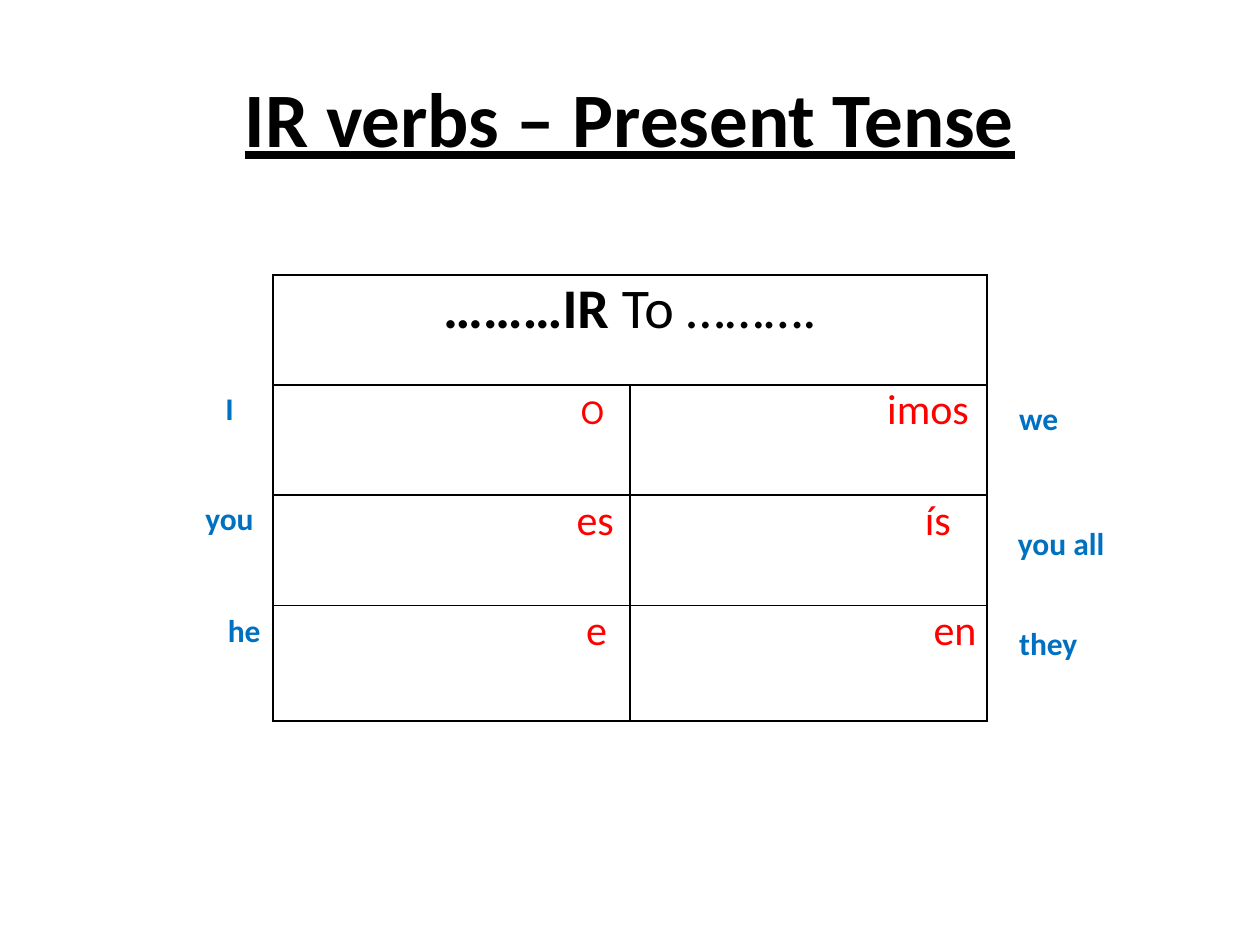
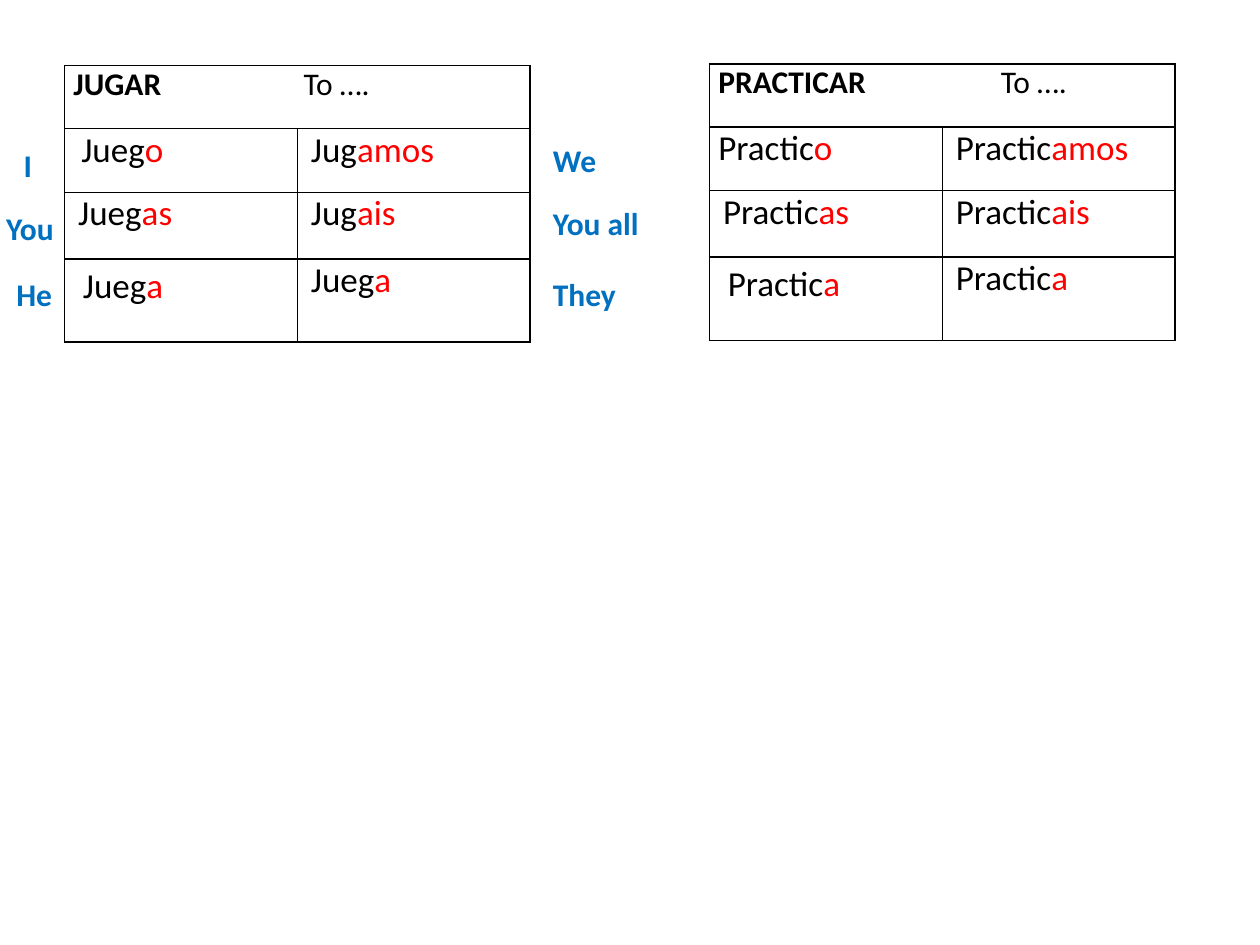
"""Build two slides of Spanish present tense verb tables."""
import pptx
import pptx.util
import pptx.dml.color
import pptx.enum.text
import pptx.oxml
import pptx.oxml.ns

Pt = pptx.util.Pt
RGBColor = pptx.dml.color.RGBColor
ALIGN = pptx.enum.text.PP_ALIGN

BLACK = RGBColor(0x00, 0x00, 0x00)
RED = RGBColor(0xFF, 0x00, 0x00)
BLUE = RGBColor(0x00, 0x70, 0xC0)
FONT = "Calibri"
INSET = 5

TITLE = "IR verbs – Present Tense"

# Cells: (stem, ending, left inset, top inset, size)
ENDINGS = {
    "at": (156, 157), "col": 204, "rows": (63, 63, 63, 66),
    "header": ("………IR", " To ………."), "header_size": 32, "tab": None,
    "cells": [
        [("", "O", 176, 3.5, 20), ("", "imos", 147, 0, 24)],
        [("", "es", 173.5, 0, 24), ("", "ís", 168.5, 0, 24)],
        [("", "e", 179, 0, 24), ("", "en", 173.5, 0, 24)],
    ],
}


def verb_table(at, infinitive, tab, stems, first_inset):
    """Describe the table of one -ar verb."""
    stem, plural_stem = stems
    return {
        "at": at, "col": 133, "rows": (36, 36.5, 38, 47.5),
        "header": (infinitive, "\tTo …."), "header_size": 18, "tab": tab,
        "cells": [
            [(stem, "o", first_inset, 0, 20), (plural_stem, "amos", 7.7, 0, 20)],
            [(stem, "as", 7.7, 0, 20), (plural_stem, "ais", 7.7, 0, 20)],
            [(stem, "a", 10.4, 3.5, 20), (stem, "a", 7.7, 0, 20)],
        ],
    }


VERBS = [
    verb_table((37, 37.5), "JUGAR", 131.5, ("Jueg", "Jug"), 9.5),
    verb_table((405.5, 36.5), "PRACTICAR", 161.5, ("Practic", "Practic"), INSET),
]

# Pronouns: (text, left, top, width)
ENDING_PRONOUNS = [
    ("I", 121.7, 218.9, 19.4), ("you", 110.2, 281.5, 42.5), ("he", 123.1, 345.6, 33.1),
    ("we", 575.3, 224.6, 36.7), ("you all", 574.6, 295.9, 64.1), ("they", 575.3, 352.8, 48.2),
]
VERB_PRONOUNS = [
    ("I", 6.5, 79.9, 19.4), ("You", -3.6, 115.9, 43), ("He", 2.2, 153.4, 35.3),
    ("We", 308.9, 77, 39.6), ("You all", 308.9, 113, 64.1), ("They", 308.9, 153.4, 50.4),
]


def add_run(p, text, size, color=BLACK, bold=False):
    """Append a formatted run to a paragraph."""
    r = p.add_run()
    r.text = text
    r.font.name, r.font.size, r.font.bold = FONT, Pt(size), bold
    r.font.color.rgb = color
    return r


def add_borders(cell):
    """Draw a one point black line on each side of a cell."""
    tcPr = cell._tc.get_or_add_tcPr()
    for i, side in enumerate("LRTB"):
        tcPr.insert(i, pptx.oxml.parse_xml(
            f'<a:ln{side} {pptx.oxml.ns.nsdecls("a")} w="12700"><a:solidFill>'
            f'<a:srgbClr val="{BLACK}"/></a:solidFill></a:ln{side}>'))


def add_tab(p, position):
    """Set one left tab stop on a paragraph."""
    p._p.get_or_add_pPr().append(pptx.oxml.parse_xml(
        f'<a:tabLst {pptx.oxml.ns.nsdecls("a")}>'
        f'<a:tab pos="{int(Pt(position))}" algn="l"/></a:tabLst>'))


def add_verb_table(s, spec_):
    """Add a verb table with a merged header row."""
    rows, col = spec_["rows"], spec_["col"]
    left, top = spec_["at"]
    table = s.shapes.add_table(len(rows), 2, Pt(left), Pt(top),
                               Pt(2 * col), Pt(sum(rows))).table
    table.first_row = table.horz_banding = False
    for column in table.columns:
        column.width = Pt(col)
    for row, height in zip(table.rows, rows):
        row.height = Pt(height)
    table.cell(0, 0).merge(table.cell(0, 1))
    for cell in table.iter_cells():
        cell.fill.background()
        add_borders(cell)
        cell.margin_left = cell.margin_right = Pt(INSET)
        cell.margin_top = cell.margin_bottom = 0

    p = table.cell(0, 0).text_frame.paragraphs[0]
    if spec_["tab"]:
        add_tab(p, spec_["tab"])
    else:
        p.alignment = ALIGN.CENTER
    infinitive, meaning = spec_["header"]
    add_run(p, infinitive, spec_["header_size"], bold=True)
    add_run(p, meaning, spec_["header_size"])

    for i, line in enumerate(spec_["cells"], 1):
        for j, (stem, ending, inset, drop, size) in enumerate(line):
            cell = table.cell(i, j)
            cell.margin_left, cell.margin_top, cell.margin_right = Pt(inset), Pt(drop), 0
            p = cell.text_frame.paragraphs[0]
            if stem:
                add_run(p, stem, size)
            add_run(p, ending, size, RED)


def add_pronouns(s, pronouns):
    """Add the bold blue pronouns beside a table."""
    for text, left, top, width in pronouns:
        tf = s.shapes.add_textbox(Pt(left), Pt(top), Pt(width), Pt(29)).text_frame
        tf.word_wrap = False
        add_run(tf.paragraphs[0], text, 18, BLUE, bold=True)


def main():
    """Build and save the slides."""
    prs = pptx.Presentation()
    prs.slide_width, prs.slide_height = Pt(720), Pt(540)

    s = prs.slides.add_slide(prs.slide_layouts[5])
    title = s.shapes.title
    title.left, title.top, title.width, title.height = Pt(36), Pt(21.6), Pt(648), Pt(90)
    p = title.text_frame.paragraphs[0]
    p.alignment = ALIGN.CENTER
    add_run(p, TITLE, 44, bold=True).font.underline = True
    add_verb_table(s, ENDINGS)
    add_pronouns(s, ENDING_PRONOUNS)

    s = prs.slides.add_slide(prs.slide_layouts[6])
    for verb in VERBS:
        add_verb_table(s, verb)
    add_pronouns(s, VERB_PRONOUNS)

    prs.save("out.pptx")


if __name__ == "__main__":
    main()
